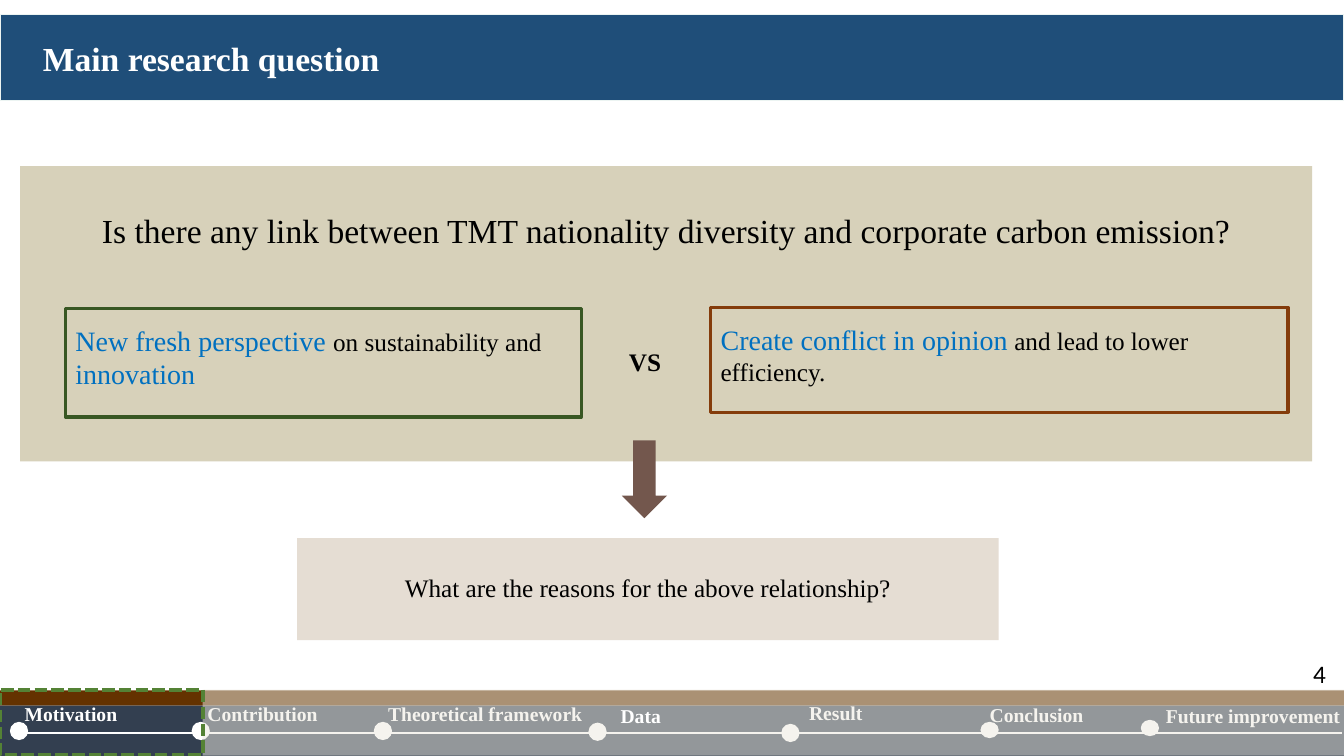
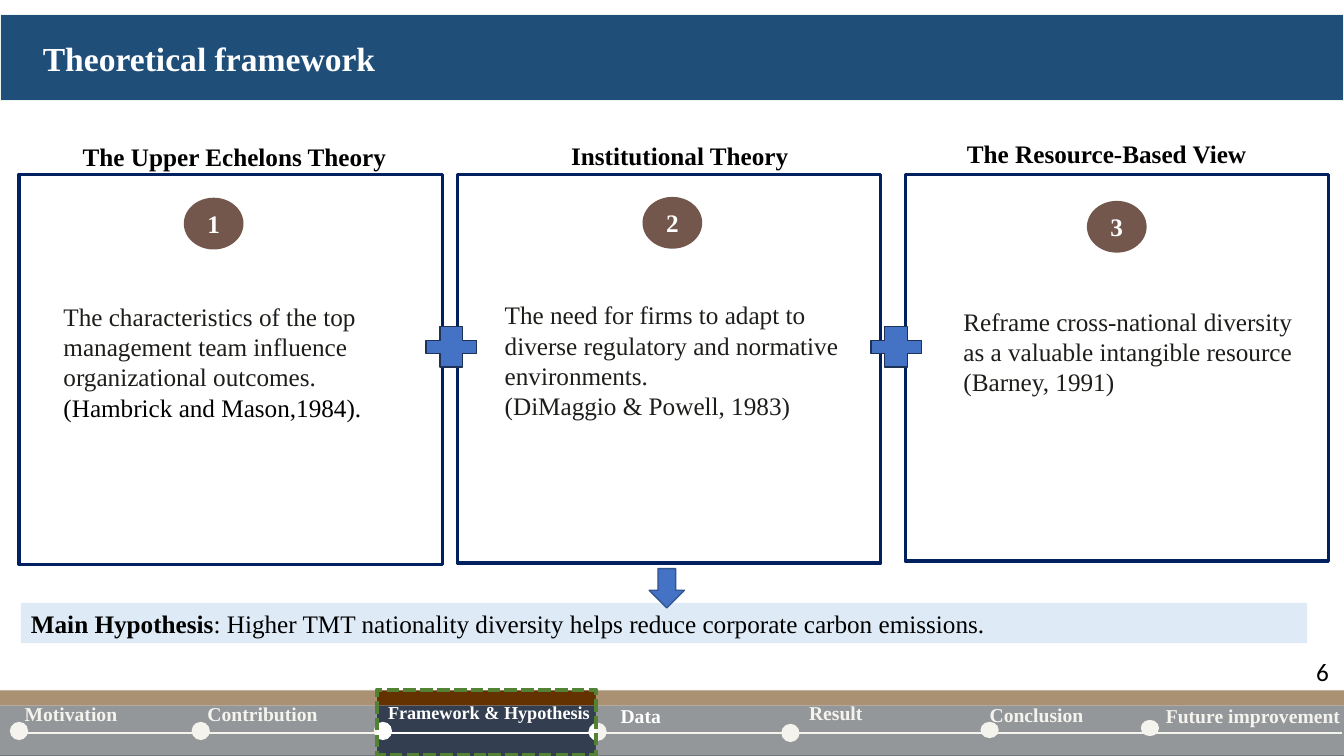
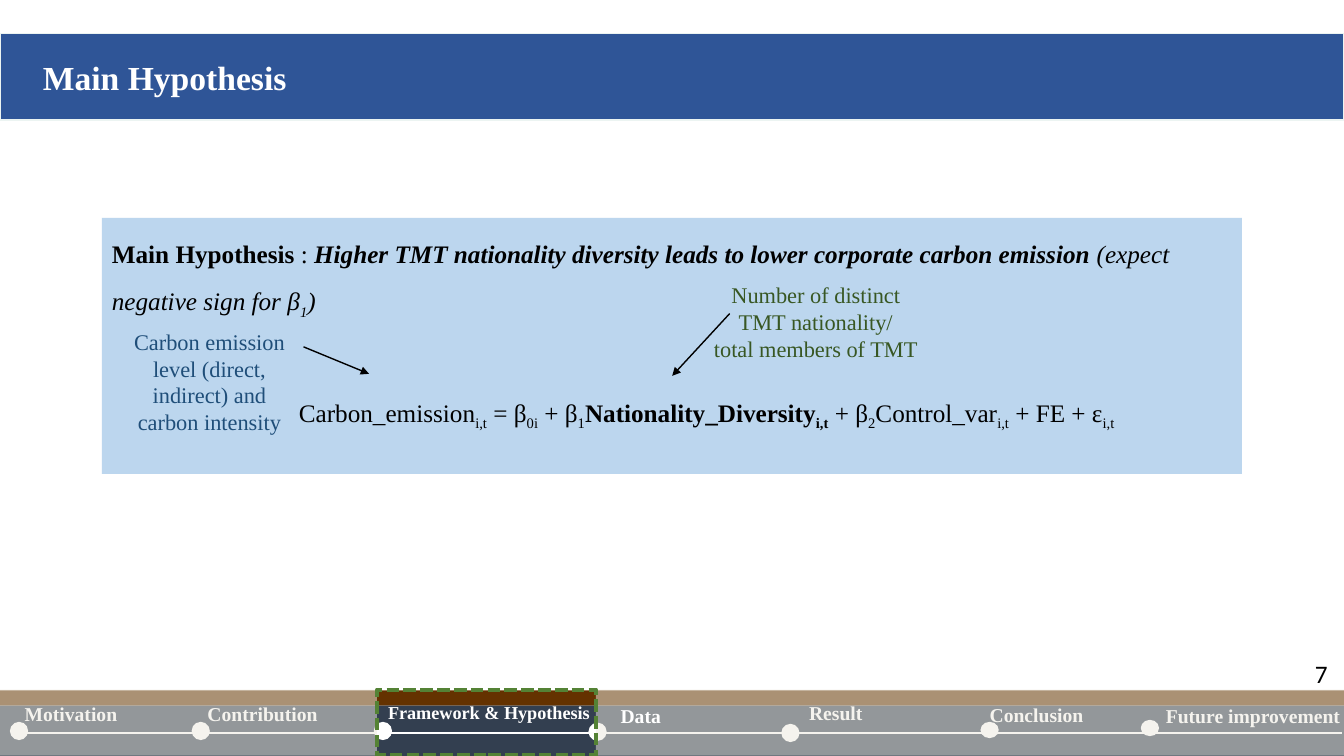
from lxml.etree import SubElement
from pptx import Presentation
from pptx.dml.color import RGBColor
from pptx.enum.dml import MSO_LINE
from pptx.enum.shapes import MSO_CONNECTOR, MSO_SHAPE
from pptx.enum.text import MSO_ANCHOR, MSO_AUTO_SIZE, PP_ALIGN
from pptx.oxml.ns import qn
from pptx.util import Cm, Pt

COLORS = {
    "white": "FFFFFF", "black": "000000", "ink": "1E1D1A",
    "navy": "1F4E79", "royal": "2F5597", "band_line": "ECF4F2",
    "sand": "D7D1BA", "blush": "E5DDD3", "brown": "73574D",
    "green": "385723", "rust": "843C0B", "highlight": "0070C0",
    "card_line": "002060", "blue": "4472C4", "blue_line": "325491",
    "plus_line": "1E3256", "pale_blue": "DEEBF7", "sky": "BCD6EE",
    "nav_top": "643200", "nav": "333F50", "shade": "ECE9DF",
    "marker": "548235",
}
FONT = "Times New Roman"
WIDTH, HEIGHT = 33.87, 19.05
LEFT, CENTER = PP_ALIGN.LEFT, PP_ALIGN.CENTER

# Navigation: label, left, top, width
NAV_LABELS = [
    ("Motivation", 0.37, 17.55, 5),
    ("Contribution", 4.98, 17.55, 4.5),
    ("Theoretical framework", 9.53, 17.55, 5.77),
    ("Result", 20.14, 17.53, 3.58),
    ("Conclusion", 24.69, 17.58, 4),
    ("Future improvement", 29.13, 17.6, 4.74),
]
NAV_DATA = ("Data", 15.39, 17.6, 3.58)
# Navigation dots: left, top, height
NAV_DOTS = [
    (0.25, 18.19, 0.46), (4.83, 18.19, 0.46), (9.42, 18.19, 0.46),
    (14.83, 18.21, 0.46), (19.69, 18.24, 0.46),
    (24.71, 18.19, 0.41), (28.75, 18.14, 0.41),
]


def rgb(name):
    return RGBColor.from_string(COLORS[name])


def add_runs(p, runs, size, color, bold=False, font=FONT):
    """Each run is a string or (string, overrides)."""
    for run in runs:
        text, fmt = run if isinstance(run, tuple) else (run, {})
        r = p.add_run()
        r.text = text
        r.font.name = font
        r.font.size = Pt(fmt.get("size", size))
        r.font.color.rgb = rgb(fmt.get("color", color))
        r.font.bold = fmt.get("bold", bold)
        r.font.italic = fmt.get("italic", False)
        if fmt.get("sub"):
            r.font._element.set("baseline", "-25000")


def fill_text(sp, paras, size=18, color="black", bold=False, align=LEFT,
              anchor=MSO_ANCHOR.TOP, top=0.13, font=FONT):
    """Write paragraphs, each a list of runs."""
    tf = sp.text_frame
    tf.word_wrap = True
    tf.vertical_anchor = anchor
    tf.margin_top = Cm(top)
    for n, runs in enumerate(paras):
        p = tf.add_paragraph() if n else tf.paragraphs[0]
        p.alignment = align
        add_runs(p, runs, size, color, bold, font)
    return tf


def add_text(s, at, paras, **style):
    sp = s.shapes.add_textbox(*map(Cm, at))
    return fill_text(sp, paras, **style)


def add_box(s, at, fill=None, line=None, weight=1, kind=MSO_SHAPE.RECTANGLE):
    sp = s.shapes.add_shape(kind, *map(Cm, at))
    sp.shadow.inherit = False
    if fill:
        sp.fill.solid()
        sp.fill.fore_color.rgb = rgb(fill)
    else:
        sp.fill.background()
    if line:
        sp.line.color.rgb = rgb(line)
        sp.line.width = Pt(weight)
    else:
        sp.line.fill.background()
    return sp


def add_line(s, start, end, color, weight, arrow=False):
    cx = s.shapes.add_connector(MSO_CONNECTOR.STRAIGHT, *map(Cm, start + end))
    cx.line.color.rgb = rgb(color)
    cx.line.width = Pt(weight)
    spPr = cx.element.spPr
    if arrow:
        SubElement(spPr.find(qn("a:ln")), qn("a:tailEnd"), type="triangle")
    SubElement(spPr, qn("a:effectLst"))


def add_title(s, text, top=0.36, fill="navy"):
    sp = s.shapes.title
    sp.left, sp.top, sp.width, sp.height = map(Cm, (0, top, WIDTH, 2.18))
    sp.fill.solid()
    sp.fill.fore_color.rgb = rgb(fill)
    sp.line.color.rgb = rgb("band_line")
    sp.line.width = Pt(1)
    tf = fill_text(sp, [[text]], 24, "white", True, anchor=MSO_ANCHOR.MIDDLE)
    tf.auto_size = MSO_AUTO_SIZE.NONE
    tf.margin_left = Cm(1.08)


def add_shade(s, left, right):
    sp = add_box(s, (left, 17.38, right - left, 1.66), "shade")
    clr = sp.element.spPr.find(".//" + qn("a:srgbClr"))
    SubElement(clr, qn("a:alpha"), val="52000")


def add_nav_label(s, label, left, top, width, size=14):
    tf = add_text(s, (left, top, width, 0.86), [[label]], size=size,
                  color="white", bold=True)
    tf.margin_right = 0


def add_nav(s, start, end, renamed=None):
    """Bottom bar; the part from start to end is the current section."""
    add_box(s, (0, 17.4, WIDTH, 0.38), "nav_top")
    add_box(s, (0, 17.78, WIDTH, 1.27), "nav")
    add_line(s, (0.61, 18.47), (33.83, 18.47), "white", 2)
    for left, top, height in NAV_DOTS:
        add_box(s, (left, top, 0.46, height), "white", kind=MSO_SHAPE.OVAL)
    for label, *place in NAV_LABELS:
        if renamed and label == "Theoretical framework":
            add_nav_label(s, renamed, *place, size=13)
        else:
            add_nav_label(s, label, *place)
    # Fade the other sections
    if start > 0:
        add_shade(s, 0, start)
    add_shade(s, end, WIDTH)
    sp = add_box(s, (start, 17.38, end - start, 1.66), line="marker", weight=3)
    sp.line.dash_style = MSO_LINE.SQUARE_DOT
    add_nav_label(s, *NAV_DATA)


def add_number(s, number, left=32.92, top=16.46):
    add_text(s, (left, top, WIDTH - left, 1.02), [[number]], font="Calibri")


def new_slide(prs):
    return prs.slides.add_slide(prs.slide_layouts[5])


def question_slide(prs):
    s = new_slide(prs)
    add_title(s, "Main research question")
    # Question panel with the two opposing views
    panel = add_box(s, (0.51, 4.19, 32.56, 7.44), "sand")
    fill_text(panel, [["Is there any link between TMT nationality diversity "
                       "and corporate carbon emission?"]],
              24, align=CENTER, top=1.1)
    key = {"size": 20, "color": "highlight"}
    views = [
        ((1.65, 7.77, 13, 2.74), "green",
         [("New fresh perspective ", key), "on sustainability and ",
          ("innovation", key)]),
        ((17.91, 7.75, 14.55, 2.64), "rust",
         [("Create conflict in opinion", key),
          " and lead to lower efficiency."]),
    ]
    for at, line, runs in views:
        fill_text(add_box(s, at, line=line, weight=2.25), [runs], top=0.37)
    add_text(s, (15.6, 8.59, 2.18, 1.02), [["VS"]], bold=True)
    # Follow-up question
    add_box(s, (15.67, 11.1, 1.14, 1.96), "brown", kind=MSO_SHAPE.DOWN_ARROW)
    reasons = add_box(s, (7.49, 13.56, 17.68, 2.57), "blush")
    fill_text(reasons, [["What are the reasons for the above relationship?"]],
              align=CENTER, top=0.86)
    add_number(s, "4", 32.84)
    add_nav(s, 0, 5.11)


def framework_slide(prs):
    s = new_slide(prs)
    add_title(s, "Theoretical framework")
    # Heading, its place, card left and height, badge place, body place, body
    theories = [
        ("The Upper Echelons Theory", (1.41, 3.43), 0.48, 9.83, (4.65, 5),
         (1.35, 7.46, 9.58),
         [["The characteristics of the top management team influence "
           "organizational outcomes."],
          [("(Hambrick and Mason,1984).", {"color": "black"})]]),
        ("Institutional Theory", (12.63, 3.4), 11.53, 9.8, (16.21, 4.98),
         (12.47, 7.42, 8.92),
         [["The need for firms to adapt to diverse regulatory and normative "
           "environments."], ["(DiMaggio & Powell, 1983)"]]),
        ("The Resource-Based View", (23.39, 3.36), 22.81, 9.75, (27.41, 5.08),
         (24.03, 7.58, 9.8),
         [["Reframe cross-national diversity"],
          ["as a valuable intangible resource"], ["(Barney, 1991)"]]),
    ]
    for n, (head, spot, left, height, badge, body, text) in enumerate(theories, 1):
        add_text(s, (*spot, 9, 1), [[head]], bold=True, align=CENTER)
        add_box(s, (left, 4.39, 10.67, height), line="card_line", weight=2.25)
        sp = add_box(s, (*badge, 1.47, 1.27), "brown", "brown",
                     kind=MSO_SHAPE.OVAL)
        fill_text(sp, [[str(n)]], color="white", bold=True, align=CENTER,
                  anchor=MSO_ANCHOR.MIDDLE)
        add_text(s, (*body, 3.3), text, color="ink")
    # Plus signs between the cards
    for left in (10.74, 21.95):
        sp = add_box(s, (left, 8.23, 1.27, 1.02), "blue", "plus_line",
                     kind=MSO_SHAPE.CROSS)
        sp.adjustments[0] = 0.34
    # Resulting hypothesis
    bar = add_box(s, (0.53, 15.19, 32.41, 1.02), "pale_blue")
    fill_text(bar, [[("Main Hypothesis", {"bold": True}),
                     ": Higher TMT nationality diversity helps reduce "
                     "corporate carbon emissions."]])
    add_box(s, (16.36, 14.33, 0.89, 0.99), "blue", "blue_line",
            kind=MSO_SHAPE.DOWN_ARROW)
    add_number(s, "6", top=16.41)
    add_nav(s, 9.5, 15.02, "Framework & Hypothesis")


def hypothesis_slide(prs):
    s = new_slide(prs)
    add_title(s, "Main Hypothesis", 0.84, "royal")
    # Hypothesis and regression equation
    bold, sub = {"bold": True}, {"sub": True}
    italic = {"italic": True}
    statement = [
        ("Main Hypothesis ", bold), ": ",
        ("Higher TMT nationality diversity leads to lower corporate carbon "
         "emission ", {"bold": True, "italic": True}),
        ("(expect negative sign for β", italic),
        ("1", {"italic": True, "sub": True}), (")", italic),
    ]
    equation = [
        "Carbon_emission", ("i,t", sub), " = β", ("0i", sub), " + β",
        ("1", sub), ("Nationality_Diversity", bold),
        ("i,t", {"bold": True, "sub": True}), " + β", ("2", sub),
        "Control_var", ("i,t", sub), " + FE + ε", ("i,t", sub),
    ]
    panel = add_box(s, (2.57, 5.49, 28.73, 6.45), "sky")
    tf = fill_text(panel, [statement, equation])
    for p in tf.paragraphs:
        p.line_spacing = 1.5
    first, second = tf.paragraphs
    first.space_after = Pt(43)
    second.alignment = CENTER
    second._p.get_or_add_pPr().set("marL", str(Cm(1.75)))
    # Explanations of the variables
    add_text(s, (2.79, 8.13, 4.98, 3),
             [["Carbon emission level (direct, indirect) and carbon intensity"]],
             size=16, color="navy", align=CENTER)
    add_text(s, (17.7, 6.96, 5.72, 2.31),
             [["Number of distinct"], ["TMT nationality/"],
              ["total members of TMT"]],
             size=16, color="green", align=CENTER)
    add_line(s, (7.65, 8.74), (9.3, 9.42), "black", 1, arrow=True)
    add_line(s, (18.39, 7.9), (16.94, 9.47), "black", 1, arrow=True)
    add_number(s, "7", 32.89)
    add_nav(s, 9.5, 15.02, "Framework & Hypothesis")


def main():
    prs = Presentation()
    prs.slide_width, prs.slide_height = Cm(WIDTH), Cm(HEIGHT)
    question_slide(prs)
    framework_slide(prs)
    hypothesis_slide(prs)
    prs.save("out.pptx")


if __name__ == "__main__":
    main()
